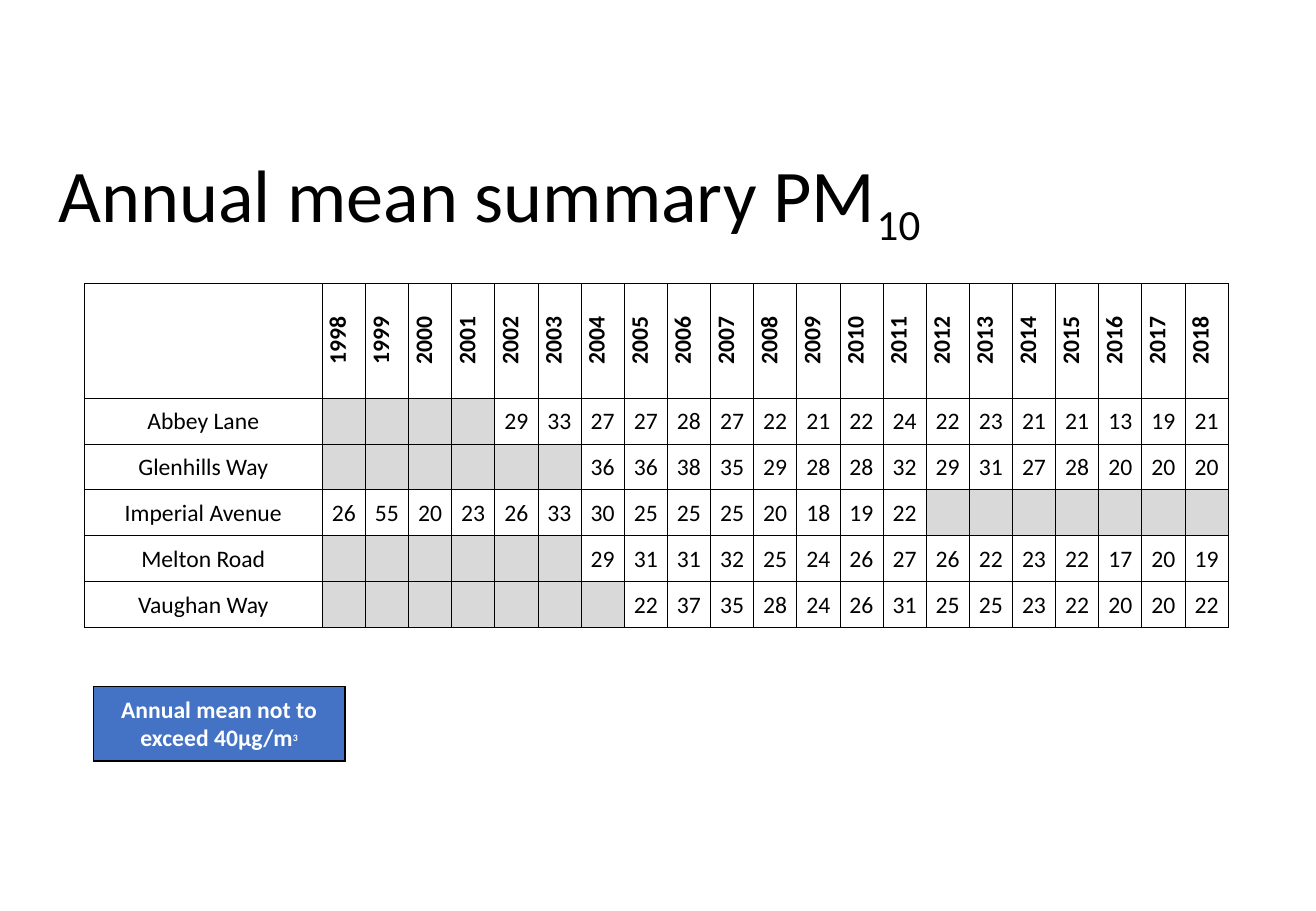
import pptx
import pptx.dml.color
import pptx.enum.text
import pptx.oxml
import pptx.oxml.ns
import pptx.util
from pptx.util import Pt

FONT = "Calibri"
BLACK, WHITE, GREY, BLUE = "000000", "FFFFFF", "D9D9D9", "4472C4"

FIRST_YEAR, LAST_YEAR = 1998, 2018
# Each site: first measured year and its readings
READINGS = {
    "Abbey Lane": (2002, [29, 33, 27, 27, 28, 27, 22, 21, 22, 24, 22, 23, 21, 21, 13, 19, 21]),
    "Glenhills Way": (2004, [36, 36, 38, 35, 29, 28, 28, 32, 29, 31, 27, 28, 20, 20, 20]),
    "Imperial Avenue": (1998, [26, 55, 20, 23, 26, 33, 30, 25, 25, 25, 20, 18, 19, 22]),
    "Melton Road": (2004, [29, 31, 31, 32, 25, 24, 26, 27, 26, 22, 23, 22, 17, 20, 19]),
    "Vaughan Way": (2005, [22, 37, 35, 28, 24, 26, 31, 25, 25, 23, 22, 20, 20, 22]),
}


def color(value):
    return pptx.dml.color.RGBColor.from_string(value)


def format_paragraph(paragraph, size, text_color, bold=False):
    paragraph.font.name = FONT
    paragraph.font.size = Pt(size)
    paragraph.font.bold = bold
    paragraph.font.color.rgb = color(text_color)


def add_shifted_run(paragraph, text, baseline):
    run = paragraph.add_run()
    run.text = text
    run._r.get_or_add_rPr().set("baseline", str(baseline * 1000))
    return run


def format_cell(cell, text, fill, text_color=BLACK, bold=False, border=0.5):
    cell.margin_left = cell.margin_right = cell.margin_top = Pt(0.7)
    cell.margin_bottom = 0
    cell.vertical_anchor = pptx.enum.text.MSO_ANCHOR.MIDDLE
    properties = cell._tc.get_or_add_tcPr()
    for side in ("lnL", "lnR", "lnT", "lnB"):
        properties.append(pptx.oxml.parse_xml(
            f'<a:{side} {pptx.oxml.ns.nsdecls("a")} w="{int(Pt(border))}">'
            f'<a:solidFill><a:srgbClr val="{BLACK}"/></a:solidFill></a:{side}>'))
    cell.fill.solid()
    cell.fill.fore_color.rgb = color(fill)
    paragraph = cell.text_frame.paragraphs[0]
    paragraph.alignment = pptx.enum.text.PP_ALIGN.CENTER
    format_paragraph(paragraph, 14, text_color, bold)
    if text:
        paragraph.add_run().text = text
    return paragraph


def add_plain_table(slide, rows, columns, left, top, width, height):
    table = slide.shapes.add_table(
        rows, columns, Pt(left), Pt(top), Pt(width), Pt(height)).table
    table.first_row = table.horz_banding = False
    return table


def add_title(slide, left, top, width, height):
    title = slide.shapes.title
    title.left, title.top, title.width, title.height = map(Pt, (left, top, width, height))
    frame = title.text_frame
    frame.auto_size = pptx.enum.text.MSO_AUTO_SIZE.NONE
    frame.vertical_anchor = pptx.enum.text.MSO_ANCHOR.MIDDLE
    paragraph = frame.paragraphs[0]
    paragraph.alignment = pptx.enum.text.PP_ALIGN.LEFT
    paragraph.line_spacing = 0.9
    format_paragraph(paragraph, 44, BLACK)
    paragraph.add_run().text = "Annual mean summary PM"
    add_shifted_run(paragraph, "10", -25)


def add_readings_table(slide, left, top, width, height):
    years = range(FIRST_YEAR, LAST_YEAR + 1)
    site_width, header_height = 141, 68
    table = add_plain_table(
        slide, len(READINGS) + 1, len(years) + 1, left, top, width, height)
    for index, column in enumerate(table.columns):
        column.width = Pt((width - site_width) / len(years) if index else site_width)
    for index, row in enumerate(table.rows):
        row.height = Pt((height - header_height) / len(READINGS) if index else header_height)

    # Header row with upright years
    format_cell(table.cell(0, 0), "", WHITE)
    for column, year in enumerate(years, 1):
        cell = table.cell(0, column)
        format_cell(cell, str(year), WHITE, bold=True)
        cell._tc.tcPr.set("vert", "vert270")

    # One row per site; years without a reading are grey
    for row, (site, (start, values)) in enumerate(READINGS.items(), 1):
        format_cell(table.cell(row, 0), site, WHITE)
        by_year = dict(enumerate(values, start))
        for column, year in enumerate(years, 1):
            format_cell(table.cell(row, column), str(by_year.get(year, "")),
                        WHITE if year in by_year else GREY)


def add_limit_box(slide, left, top, width, height):
    table = add_plain_table(slide, 1, 1, left, top, width, height)
    paragraph = format_cell(table.cell(0, 0), "Annual mean not to exceed 40µg/m",
                            BLUE, WHITE, bold=True, border=1)
    add_shifted_run(paragraph, "3", 30).font.size = Pt(10)


def main():
    presentation = pptx.Presentation()
    presentation.slide_width, presentation.slide_height = Pt(780), Pt(540)
    slide = presentation.slides.add_slide(presentation.slide_layouts.get_by_name("Title Only"))
    add_title(slide, 27.4, 63.4, 672.5, 104.4)
    add_readings_table(slide, 50, 168, 678, 204)
    add_limit_box(slide, 55.4, 407, 149, 44)
    presentation.save("out.pptx")


if __name__ == "__main__":
    main()
